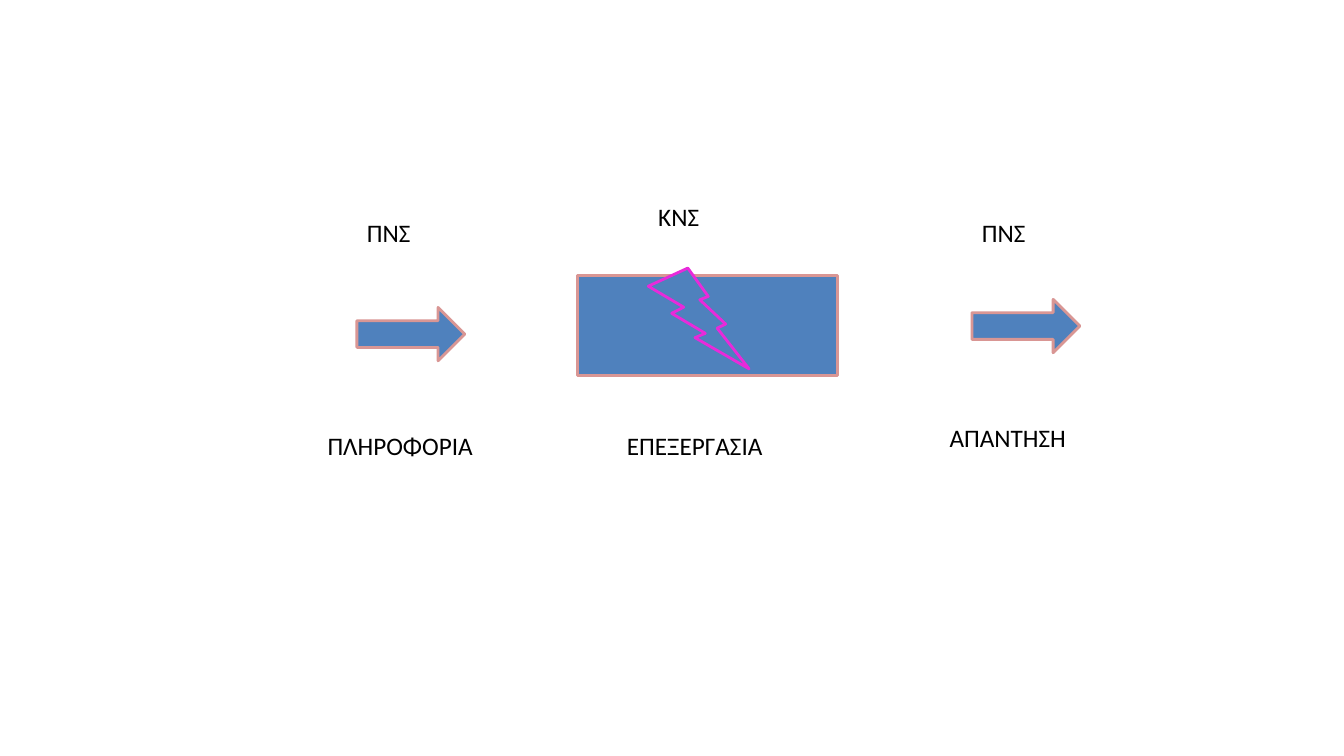
from pptx import Presentation
from pptx.dml.color import RGBColor
from pptx.enum.shapes import MSO_SHAPE as Shape
from pptx.enum.text import MSO_AUTO_SIZE as Fit
from pptx.util import Pt

PX = 9144  # 100 px to the inch
BLUE = RGBColor(0x4F, 0x81, 0xBD)
ROSE = RGBColor(0xD9, 0x96, 0x94)
PINK = RGBColor(0xE8, 0x2A, 0xDA)
BLACK = RGBColor(0, 0, 0)

ARROW = (107, 53)
HIGH = 40  # label height

# kind, left, top, size, outline
SHAPES = [
    (Shape.RECTANGLE, 573, 273, (258, 100), ROSE),
    (Shape.RIGHT_ARROW, 354, 305, ARROW, ROSE),
    (Shape.RIGHT_ARROW, 964, 297, ARROW, ROSE),
    (Shape.LIGHTNING_BOLT, 643, 266, (100, 100), PINK),
]

# text, left, top, width, wrap
LABELS = [
    ("ΠΛΗΡΟΦΟΡΙΑ", 315, 422, 188, True),
    ("ΑΠΑΝΤΗΣΗ", 932, 414, 180, True),
    ("ΕΠΕΞΕΡΓΑΣΙΑ", 612, 422, 156, False),
    ("ΠΝΣ", 354, 211, 64, False),
    ("ΠΝΣ", 964, 211, 64, False),
    ("ΚΝΣ", 643, 195, 61, False),
]


def emu(*sizes):
    return [size * PX for size in sizes]


deck = Presentation()
deck.slide_width, deck.slide_height = emu(1333, 750)
slide = deck.slides.add_slide(deck.slide_layouts[6])

# Arrows, processing box and bolt
for kind, left, top, size, edge in SHAPES:
    shape = slide.shapes.add_shape(kind, *emu(left, top, *size))
    shape.shadow.inherit = False
    shape.fill.solid()
    shape.fill.fore_color.rgb = BLUE
    shape.line.color.rgb = edge
    shape.line.width = Pt(2)

# Labels
for text, left, top, width, wrap in LABELS:
    frame = slide.shapes.add_textbox(*emu(left, top, width, HIGH)).text_frame
    frame.word_wrap = wrap
    frame.auto_size = Fit.SHAPE_TO_FIT_TEXT
    para = frame.paragraphs[0]
    para.text = text
    para.font.name = "Calibri"
    para.font.size = Pt(18)
    para.font.color.rgb = BLACK

deck.save("out.pptx")
